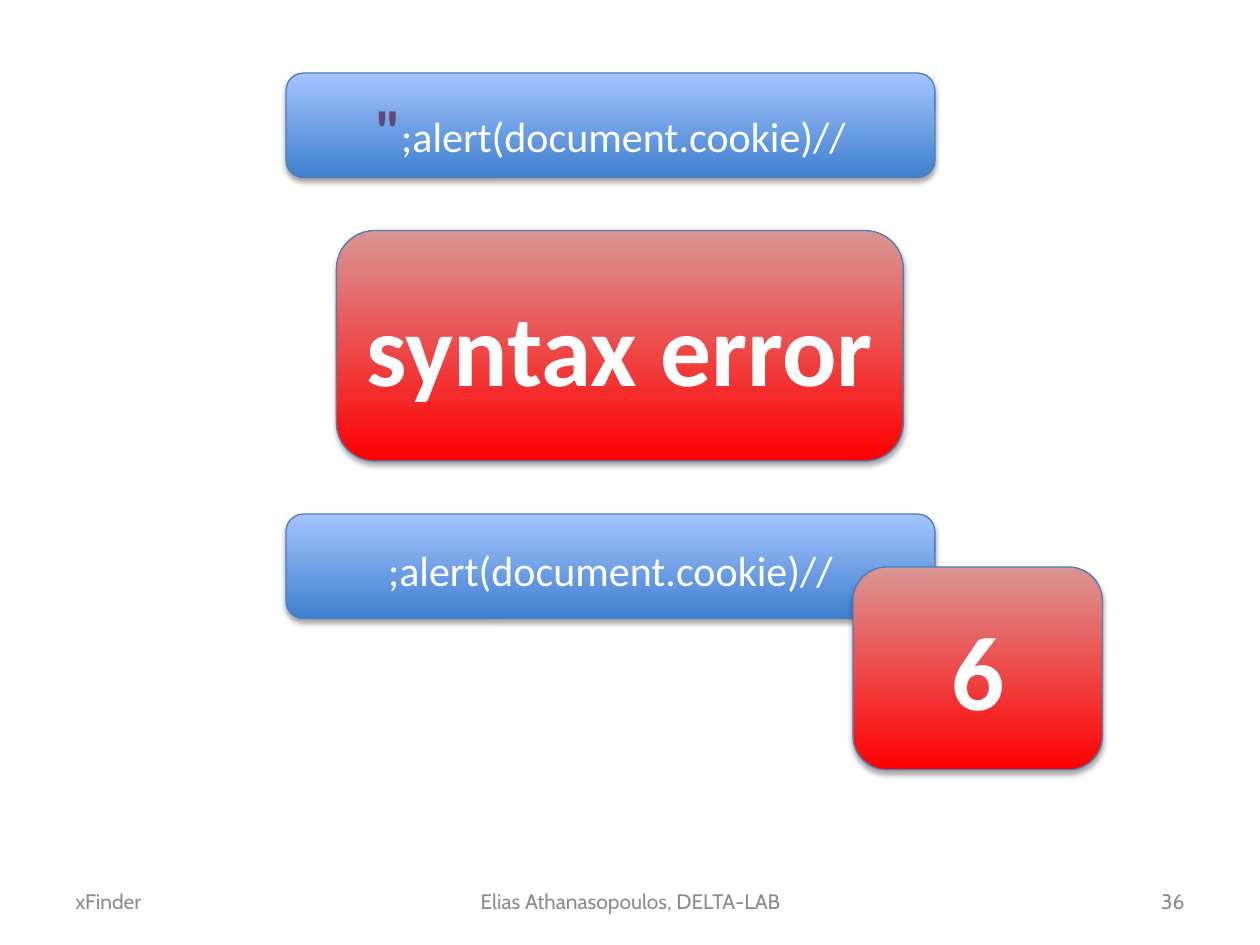
"""Build the slide on code injection ending in a syntax error."""
from dataclasses import dataclass

from lxml import etree
from pptx import Presentation
from pptx.dml.color import RGBColor
from pptx.enum.shapes import MSO_SHAPE
from pptx.enum.text import MSO_ANCHOR, PP_ALIGN
from pptx.oxml.ns import qn
from pptx.util import Inches, Pt

ROUNDED = MSO_SHAPE.ROUNDED_RECTANGLE
MIDDLE = MSO_ANCHOR.MIDDLE
LEFT, CENTER, RIGHT = PP_ALIGN.LEFT, PP_ALIGN.CENTER, PP_ALIGN.RIGHT

WHITE = RGBColor(0xFF, 0xFF, 0xFF)
GRAY = RGBColor(0x8C, 0x8C, 0x8C)
PURPLE = RGBColor(0x60, 0x4A, 0x7B)
OUTLINE = RGBColor(0x4B, 0x7E, 0xBC)
BLUES = (RGBColor(0x3F, 0x80, 0xCE), RGBColor(0xA4, 0xC4, 0xFF))
REDS = (RGBColor(0xFF, 0x00, 0x00), RGBColor(0xD9, 0x96, 0x94))


@dataclass(frozen=True)
class Span:
    text: str
    size: float
    color: RGBColor = WHITE
    bold: bool = False
    font: str = "Calibri"


@dataclass(frozen=True)
class Box:
    left: float
    top: float
    width: float
    height: float
    colors: tuple[RGBColor, RGBColor]
    spans: tuple[Span, ...]
    inset_top: float = 0.05


@dataclass(frozen=True)
class Footer:
    left: float
    width: float
    text: str
    align: PP_ALIGN


def code_box(top: float, *spans: Span) -> Box:
    return Box(2.27, top, 5.15, 0.83, BLUES, spans, 0.1)


PAYLOAD = Span(";alert(document.cookie)//", 24)
BOXES = (
    code_box(0.58, Span('"', 34, PURPLE, True), PAYLOAD),
    Box(2.67, 1.83, 4.5, 1.83, REDS, (Span("syntax error", 58, bold=True),)),
    code_box(4.08, PAYLOAD),
    Box(6.77, 4.5, 1.98, 1.61, REDS, (Span("6", 60, bold=True),)),
)
FOOTERS = (
    Footer(0.5, 2.33, "xFinder", LEFT),
    Footer(3.42, 3.17, "Elias Athanasopoulos, DELTA-LAB", CENTER),
    Footer(7.17, 2.33, "36", RIGHT),
)


def write(tf, spans: tuple[Span, ...], align: PP_ALIGN) -> None:
    tf.word_wrap = True
    tf.vertical_anchor = MIDDLE
    p = tf.paragraphs[0]
    p.alignment = align
    for span in spans:
        r = p.add_run()
        r.text = span.text
        r.font.name = span.font
        r.font.size = Pt(span.size)
        r.font.bold = span.bold
        r.font.color.rgb = span.color


def add_shadow(sp) -> None:
    sp.shadow.inherit = False
    effects = sp._element.spPr.find(qn("a:effectLst"))
    shadow = etree.SubElement(
        effects, qn("a:outerShdw"), blurRad=str(Pt(3.1)), dist=str(Pt(1.8)),
        dir="5400000", rotWithShape="0")
    color = etree.SubElement(shadow, qn("a:srgbClr"), val="000000")
    etree.SubElement(color, qn("a:alpha"), val="35000")


def draw_box(s, box: Box) -> None:
    sp = s.shapes.add_shape(ROUNDED, Inches(box.left), Inches(box.top),
                            Inches(box.width), Inches(box.height))
    sp.fill.gradient()
    sp.fill.gradient_angle = 90
    for stop, color in zip(sp.fill.gradient_stops, box.colors):
        stop.color.rgb = color
    sp.line.color.rgb = OUTLINE
    sp.line.width = Pt(0.75)
    add_shadow(sp)
    sp.text_frame.margin_top = Inches(box.inset_top)
    write(sp.text_frame, box.spans, CENTER)


def draw_footer(s, footer: Footer) -> None:
    sp = s.shapes.add_textbox(Inches(footer.left), Inches(6.95),
                              Inches(footer.width), Inches(0.4))
    write(sp.text_frame, (Span(footer.text, 12, GRAY, font="Cabin"),), footer.align)


def main() -> None:
    prs = Presentation()
    prs.slide_width, prs.slide_height = Inches(10), Inches(7.5)
    s = prs.slides.add_slide(prs.slide_layouts[6])
    for footer in FOOTERS:
        draw_footer(s, footer)
    for box in BOXES:
        draw_box(s, box)
    prs.save("out.pptx")


if __name__ == "__main__":
    main()
